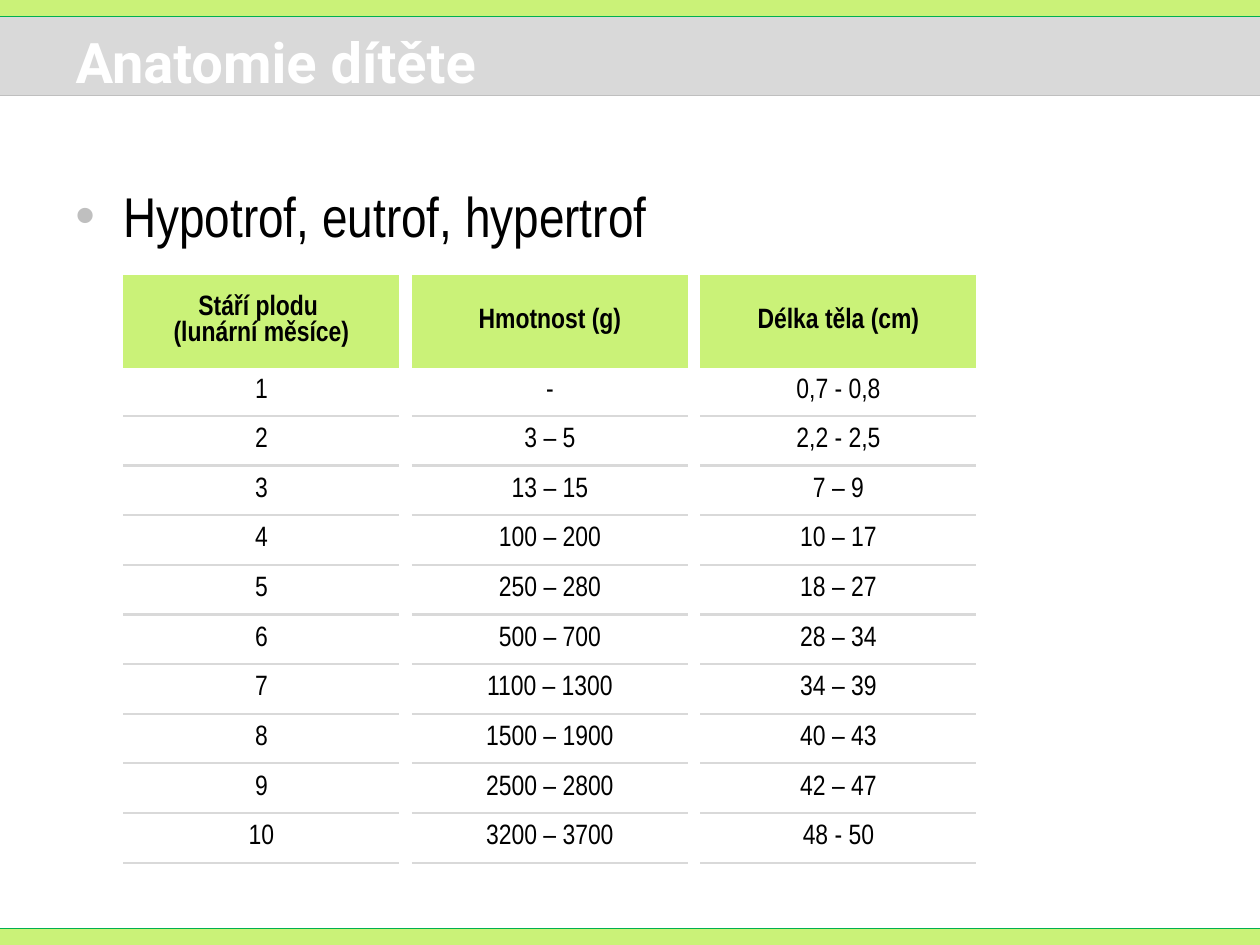
"""Build the slide on fetal weight and length by lunar month."""
import dataclasses

import lxml.etree
import pptx
import pptx.dml.color
import pptx.enum.shapes
import pptx.enum.text
import pptx.oxml.ns
import pptx.slide
import pptx.table
import pptx.text.text
import pptx.util

BLACK = pptx.dml.color.RGBColor(0x00, 0x00, 0x00)
WHITE = pptx.dml.color.RGBColor(0xFF, 0xFF, 0xFF)
LIME = pptx.dml.color.RGBColor(0xCA, 0xF2, 0x78)
GREEN = pptx.dml.color.RGBColor(0x00, 0xB0, 0x50)
GREY = pptx.dml.color.RGBColor(0xD9, 0xD9, 0xD9)
STEEL = pptx.dml.color.RGBColor(0xBF, 0xBF, 0xBF)
NARROW = "Arial Narrow"
PLAIN = "{2D5ABB26-0587-4C30-8999-92F81FD0307C}"
WIDE = 10

HEADS = [["Stáří plodu ", "(lunární měsíce)"], ["Hmotnost (g)"], ["Délka těla (cm)"]]
MONTHS = [
    ("-", "0,7 - 0,8"),
    ("3 – 5", "2,2 - 2,5"),
    ("13 – 15", "7 – 9"),
    ("100 – 200", "10 – 17"),
    ("250 – 280", "18 – 27"),
    ("500 – 700", "28 – 34"),
    ("1100 – 1300", "34 – 39"),
    ("1500 – 1900", "40 – 43"),
    ("2500 – 2800", "42 – 47"),
    ("3200 – 3700", "48 - 50"),
]
COLS = [2.19, 0.1, 2.19, 0.1, 2.19]
ROWS = [0.74, 0.38] + [3.55 / 9] * 9 + [0.29]


@dataclasses.dataclass
class Band:
    top: float
    height: float
    fill: pptx.dml.color.RGBColor


@dataclasses.dataclass
class Rule:
    top: float
    color: pptx.dml.color.RGBColor


@dataclasses.dataclass
class Style:
    face: str
    size: int
    color: pptx.dml.color.RGBColor
    bold: bool = False


BANDS = [Band(0.13, 0.63, GREY), Band(7.37, 0.13, LIME), Band(0, 0.13, LIME)]
RULES = [Rule(7.37, GREEN), Rule(0.13, GREEN), Rule(0.76, STEEL)]


def add_band(slide: pptx.slide.Slide, band: Band) -> None:
    shape = slide.shapes.add_shape(
        pptx.enum.shapes.MSO_SHAPE.RECTANGLE, 0, pptx.util.Inches(band.top),
        pptx.util.Inches(WIDE), pptx.util.Inches(band.height))
    shape.shadow.inherit = False
    shape.fill.solid()
    shape.fill.fore_color.rgb = band.fill
    shape.line.fill.background()


def add_rule(slide: pptx.slide.Slide, rule: Rule) -> None:
    top = pptx.util.Inches(rule.top)
    line = slide.shapes.add_connector(
        pptx.enum.shapes.MSO_CONNECTOR.STRAIGHT, 0, top, pptx.util.Inches(WIDE), top)
    line.line.color.rgb = rule.color
    line.line.width = pptx.util.Pt(0.75)
    lxml.etree.SubElement(line.element.spPr, pptx.oxml.ns.qn("a:effectLst"))


def add_run(para: pptx.text.text._Paragraph, text: str, style: Style) -> None:
    run = para.add_run()
    run.text = text
    run.font.name = style.face
    run.font.size = pptx.util.Pt(style.size)
    run.font.bold = style.bold
    run.font.color.rgb = style.color


def add_title(slide: pptx.slide.Slide, text: str) -> None:
    title = slide.shapes.title
    title.left, title.top = pptx.util.Inches(0.5), pptx.util.Inches(0.21)
    title.width, title.height = pptx.util.Inches(9), pptx.util.Inches(0.55)
    frame = title.text_frame
    frame.auto_size = pptx.enum.text.MSO_AUTO_SIZE.NONE
    frame.vertical_anchor = pptx.enum.text.MSO_ANCHOR.MIDDLE
    frame.paragraphs[0].alignment = pptx.enum.text.PP_ALIGN.LEFT
    add_run(frame.paragraphs[0], text, Style("Roboto", 32, WHITE, True))
    slide.shapes.element.append(title.element)


def add_point(slide: pptx.slide.Slide, text: str) -> None:
    box = slide.shapes.add_textbox(
        pptx.util.Inches(0.5), pptx.util.Inches(1.39),
        pptx.util.Inches(9), pptx.util.Inches(5.51))
    box.text_frame.word_wrap = True
    para = box.text_frame.paragraphs[0]
    para.space_before = pptx.util.Pt(4.5)
    add_run(para, text, Style(NARROW, 32, BLACK))
    props = para._p.get_or_add_pPr()
    dent = pptx.util.Inches(0.38)
    props.set("marL", str(dent))
    props.set("indent", str(-dent))
    tint = lxml.etree.SubElement(props, pptx.oxml.ns.qn("a:buClr"))
    lxml.etree.SubElement(tint, pptx.oxml.ns.qn("a:srgbClr"), val=str(STEEL))
    lxml.etree.SubElement(props, pptx.oxml.ns.qn("a:buFont"), typeface="Arial")
    lxml.etree.SubElement(props, pptx.oxml.ns.qn("a:buChar"), char="•")


def add_edge(cell: pptx.table._Cell, side: str) -> None:
    edge = lxml.etree.Element(pptx.oxml.ns.qn(f"a:{side}"), w=str(pptx.util.Pt(1.5)))
    fill = lxml.etree.SubElement(edge, pptx.oxml.ns.qn("a:solidFill"))
    lxml.etree.SubElement(fill, pptx.oxml.ns.qn("a:srgbClr"), val=str(GREY))
    cell._tc.get_or_add_tcPr().insert(0, edge)


def fill_cell(cell: pptx.table._Cell, lines: list[str], head: bool) -> None:
    cell.vertical_anchor = pptx.enum.text.MSO_ANCHOR.MIDDLE
    for spot, text in enumerate(lines):
        frame = cell.text_frame
        para = frame.add_paragraph() if spot else frame.paragraphs[0]
        para.alignment = pptx.enum.text.PP_ALIGN.CENTER
        para.line_spacing = 0.8
        para.space_before = pptx.util.Pt(3 if spot else 0)
        add_run(para, text, Style(NARROW, 16, BLACK, head))
    if head:
        cell.fill.solid()
        cell.fill.fore_color.rgb = LIME


def add_grid(slide: pptx.slide.Slide) -> None:
    frame = slide.shapes.add_table(
        len(ROWS), len(COLS), pptx.util.Inches(0.98), pptx.util.Inches(2.18),
        pptx.util.Inches(sum(COLS)), pptx.util.Inches(sum(ROWS)))
    frame.element.find(f".//{pptx.oxml.ns.qn('a:tableStyleId')}").text = PLAIN
    table = frame.table
    table.first_row = table.horz_banding = False
    for col, width in zip(table.columns, COLS):
        col.width = pptx.util.Inches(width)
    for row, height in zip(table.rows, ROWS):
        row.height = pptx.util.Inches(height)
    for cell in table.iter_cells():
        cell.margin_left = cell.margin_right = cell.margin_top = pptx.util.Inches(0.01)
        cell.margin_bottom = 0
        cell.fill.background()
    months = [[[str(num)], [mass], [size]] for num, (mass, size) in enumerate(MONTHS, 1)]
    for row, items in enumerate([HEADS] + months):
        for col, lines in enumerate(items):
            fill_cell(table.cell(row, 2 * col), lines, row == 0)
    last = len(ROWS) - 1
    for row in range(1, len(ROWS)):
        for col in range(0, len(COLS), 2):
            if row < last:
                add_edge(table.cell(row, col), "lnB")
            if row > 1:
                add_edge(table.cell(row, col), "lnT")


def main() -> None:
    deck = pptx.Presentation()
    deck.slide_width = pptx.util.Inches(WIDE)
    deck.slide_height = pptx.util.Inches(7.5)
    slide = deck.slides.add_slide(deck.slide_layouts[5])
    for band in BANDS:
        add_band(slide, band)
    for rule in RULES:
        add_rule(slide, rule)
    add_title(slide, "Anatomie dítěte")
    add_point(slide, "Hypotrof, eutrof, hypertrof")
    add_grid(slide)
    deck.save("out.pptx")


if __name__ == "__main__":
    main()
